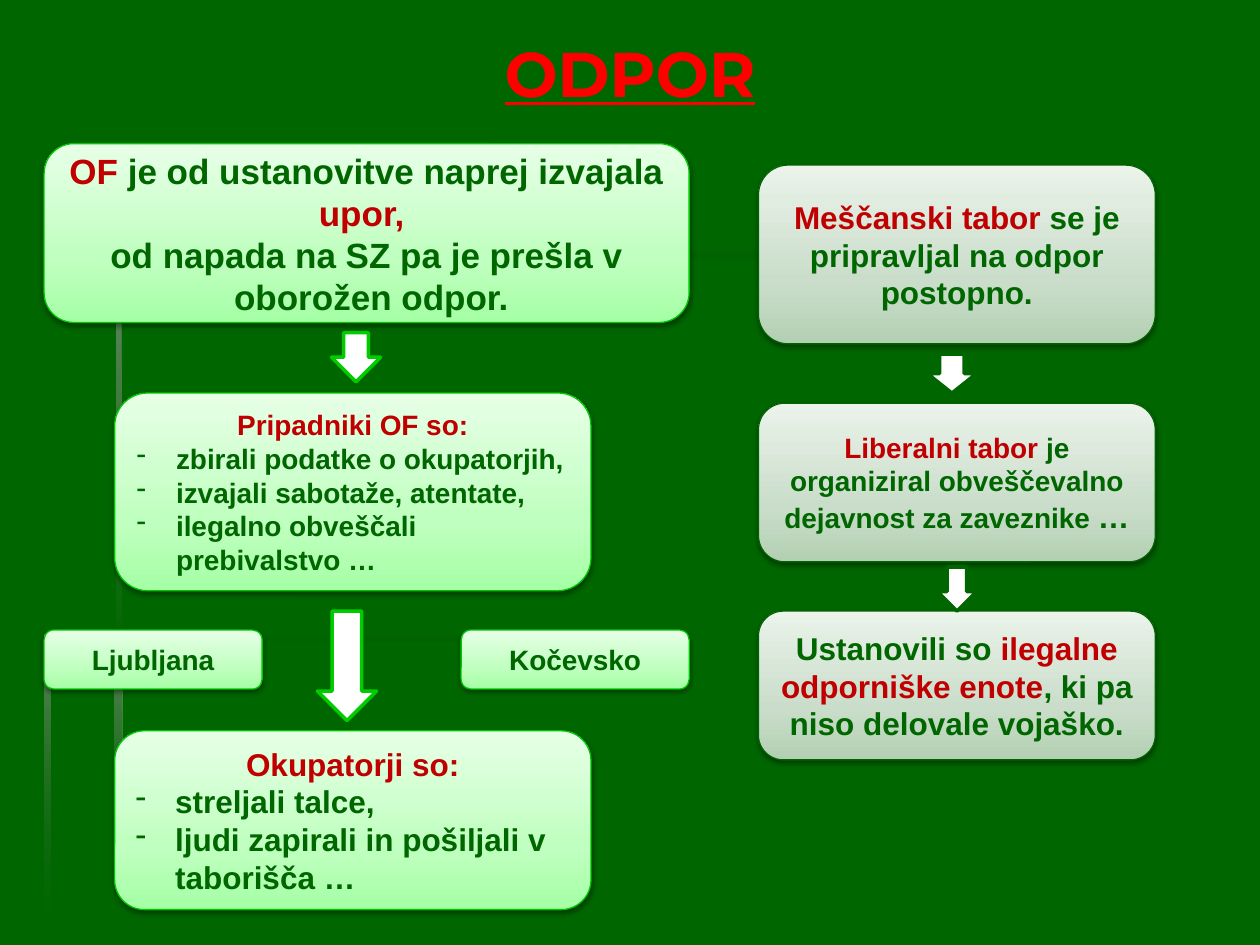
from lxml import etree
from pptx import Presentation
from pptx.dml.color import RGBColor
from pptx.enum.shapes import MSO_SHAPE
from pptx.enum.text import MSO_ANCHOR, PP_ALIGN
from pptx.oxml.ns import qn
from pptx.util import Pt

ROUNDED, DOWN_ARROW = MSO_SHAPE.ROUNDED_RECTANGLE, MSO_SHAPE.DOWN_ARROW
MIDDLE, CENTER, LEFT = MSO_ANCHOR.MIDDLE, PP_ALIGN.CENTER, PP_ALIGN.LEFT
GREEN, RED, WHITE = "006600", "C00000", "FFFFFF"
BRIGHT = [(0, "A5FFA5", 100), (35, "BFFFBF", 100), (100, "E7FFE7", 100)]
MUTED = [(0, "B3D0B3", 100), (35, "CADDCA", 100), (100, "EBF3EB", 100)]
FADE_IN = [(0, GREEN, 0), (100, "005E00", 100)]
INDENT = 22.5

PANELS = [
    [(66.2, 363.6), (66.2, 540), (720, 540), (720, 363.6)],
    [(67.7, 364.3), (25.9, 364.3), (25.9, 540), (720, 540), (720, 144), (67.7, 144)],
]
BARS = [
    ([(66.2, 144), (66.2, 147.6), (641.5, 147.6), (641.5, 144)], FADE_IN, 0),
    ([(66.2, 144), (66.2, 367.2), (69.8, 367.2), (69.1, 146.9)],
     [(0, "668666", 100), (100, GREEN, 100)], 270),
    ([(65.5, 540), (69.8, 540), (69.1, 365.8), (65.5, 362.9)],
     [(0, "668666", 100), (100, GREEN, 0)], 270),
    ([(25.2, 362.9), (25.2, 366.5), (385.2, 366.5), (385.2, 362.9)], FADE_IN, 0),
    ([(25.2, 362.9), (25.2, 540), (28.8, 540), (28.8, 366.5)],
     [(0, "668666", 100), (100, GREEN, 10)], 270),
]

RESISTANCE_BOXES = [
    ((25.2, 82.1, 368.6, 102.2), 20, [
        [("OF", RED), (" je od ustanovitve naprej izvajala ", GREEN), ("upor, ", RED)],
        [("od napada na SZ pa je prešla v", GREEN)],
        [(" oborožen odpor.", GREEN)]], []),
    ((65.5, 224.6, 272.2, 113), 16, [[("Pripadniki OF so:", RED)]],
     ["zbirali podatke o okupatorjih,", "izvajali sabotaže, atentate,",
      "ilegalno obveščali prebivalstvo …"]),
    ((25.2, 360, 124.6, 33.8), 16, [[("Ljubljana", GREEN)]], []),
    ((263.5, 360, 130.3, 33.8), 16, [[("Kočevsko", GREEN)]], []),
    ((65.5, 417.6, 272.2, 102.2), 18, [[("Okupatorji so:", RED)]],
     ["streljali talce,", "ljudi zapirali in pošiljali v taborišča …"]),
]
CAMP_BOXES = [
    ((433.4, 94.3, 226.8, 102.2), 18, [
        [("Meščanski tabor ", RED), ("se je pripravljal na odpor postopno.", GREEN)]], []),
    ((433.4, 230.4, 226.8, 90.7), 16, [
        [("Liberalni tabor ", RED),
         ("je organiziral obveščevalno dejavnost za zaveznike ", GREEN),
         ("…", GREEN, 18)]], []),
    ((433.4, 349.2, 226.8, 85), 18, [
        [("Ustanovili so ", GREEN), ("ilegalne odporniške enote", RED),
         (", ki pa niso delovale vojaško.", GREEN)]], []),
]
ARROWS = [
    ((189.4, 190.1, 28.1, 28.1), "00CC00"),
    ((181.4, 349.2, 33.8, 62.6), "00CC00"),
    ((529.9, 202.3, 28.1, 22.3), GREEN),
    ((535.7, 324, 22.3, 25.2), GREEN),
]


def rgb(value):
    """Turn a hex string into a colour."""
    return RGBColor.from_string(value)


def add_color(parent, value, alpha):
    """Add a colour with its opacity in percent."""
    clr = etree.SubElement(parent, qn("a:srgbClr"), val=value)
    if alpha < 100:
        etree.SubElement(clr, qn("a:alpha"), val=str(alpha * 1000))


def set_gradient(sp, stops, angle):
    """Fill a shape with a linear gradient; the angle runs counter-clockwise."""
    sp.fill.gradient()
    sp.fill.gradient_angle = angle
    gs_list = sp._element.spPr.find(qn("a:gradFill")).find(qn("a:gsLst"))
    for gs in list(gs_list):
        gs_list.remove(gs)
    for pos, value, alpha in stops:
        add_color(etree.SubElement(gs_list, qn("a:gs"), pos=str(pos * 1000)), value, alpha)


def add_shadow(sp):
    """Give a shape a soft shadow straight below it."""
    sp.shadow.inherit = False
    effects = sp._element.spPr.find(qn("a:effectLst"))
    shadow = etree.SubElement(effects, qn("a:outerShdw"), blurRad=str(Pt(3.1)),
                              dist=str(Pt(1.6)), dir="5400000", rotWithShape="0")
    add_color(shadow, "000000", 38)


def add_polygon(s, points):
    """Add a closed outline without line or shadow."""
    (x, y), *rest = [(Pt(px), Pt(py)) for px, py in points]
    builder = s.shapes.build_freeform(x, y)
    builder.add_line_segments(rest, close=True)
    sp = builder.convert_to_shape()
    sp.line.fill.background()
    sp.shadow.inherit = False
    return sp


def add_panel(s, points):
    """Add a translucent background panel."""
    sp = add_polygon(s, points)
    sp.fill.solid()
    sp.fill.fore_color.rgb = rgb(GREEN)
    clr = sp._element.spPr.find(qn("a:solidFill"))[0]
    etree.SubElement(clr, qn("a:alpha"), val="30000")


def add_run(p, text, color, size, font="Arial"):
    """Add a bold run."""
    r = p.add_run()
    r.text = text
    r.font.name, r.font.size, r.font.bold = font, Pt(size), True
    r.font.color.rgb = rgb(color)
    return r


def set_dash(p):
    """Give a paragraph a hanging dash bullet."""
    pPr = p._p.get_or_add_pPr()
    pPr.set("marL", str(Pt(INDENT)))
    pPr.set("indent", str(-Pt(INDENT)))
    etree.SubElement(pPr, qn("a:buFontTx"))
    etree.SubElement(pPr, qn("a:buChar"), char="-")


def add_box(s, box, size, lines, items, stops, outline):
    """Add a rounded box with centred lines and dashed items."""
    sp = s.shapes.add_shape(ROUNDED, *map(Pt, box))
    set_gradient(sp, stops, 90)
    sp.line.color.rgb = rgb(outline)
    sp.line.width = Pt(0.75)
    add_shadow(sp)
    tf = sp.text_frame
    tf.word_wrap = True
    tf.vertical_anchor = MIDDLE
    paragraphs = lines + [[(item, GREEN)] for item in items]
    for i, runs in enumerate(paragraphs):
        p = tf.add_paragraph() if i else tf.paragraphs[0]
        p.alignment = CENTER if i < len(lines) else LEFT
        if i >= len(lines):
            set_dash(p)
        for text, color, *own_size in runs:
            add_run(p, text, color, *(own_size or [size]))


def add_arrow(s, box, outline):
    """Add a white down arrow."""
    sp = s.shapes.add_shape(DOWN_ARROW, *map(Pt, box))
    sp.fill.solid()
    sp.fill.fore_color.rgb = rgb(WHITE)
    sp.line.color.rgb = rgb(outline)
    sp.line.width = Pt(2)
    sp.shadow.inherit = False


def set_title(s, text):
    """Place and format the title."""
    sp = s.shapes.title
    sp.left, sp.top, sp.width, sp.height = map(Pt, (36, 21.6, 648, 38.9))
    tf = sp.text_frame
    tf.vertical_anchor = MIDDLE
    p = tf.paragraphs[0]
    p.alignment = CENTER
    add_run(p, text, "FF0000", 36, "Montserrat").font.underline = True


def main():
    """Build and save the slide."""
    prs = Presentation()
    prs.slide_width, prs.slide_height = Pt(720), Pt(540)
    s = prs.slides.add_slide(prs.slide_layouts[5])
    s.background.fill.solid()
    s.background.fill.fore_color.rgb = rgb(GREEN)
    for points in PANELS:
        add_panel(s, points)
    for points, stops, angle in BARS:
        set_gradient(add_polygon(s, points), stops, angle)
    set_title(s, "ODPOR")
    for box in RESISTANCE_BOXES:
        add_box(s, *box, BRIGHT, "00C800")
    for box in CAMP_BOXES:
        add_box(s, *box, MUTED, "006400")
    for arrow in ARROWS:
        add_arrow(s, *arrow)
    prs.save("out.pptx")


if __name__ == "__main__":
    main()
